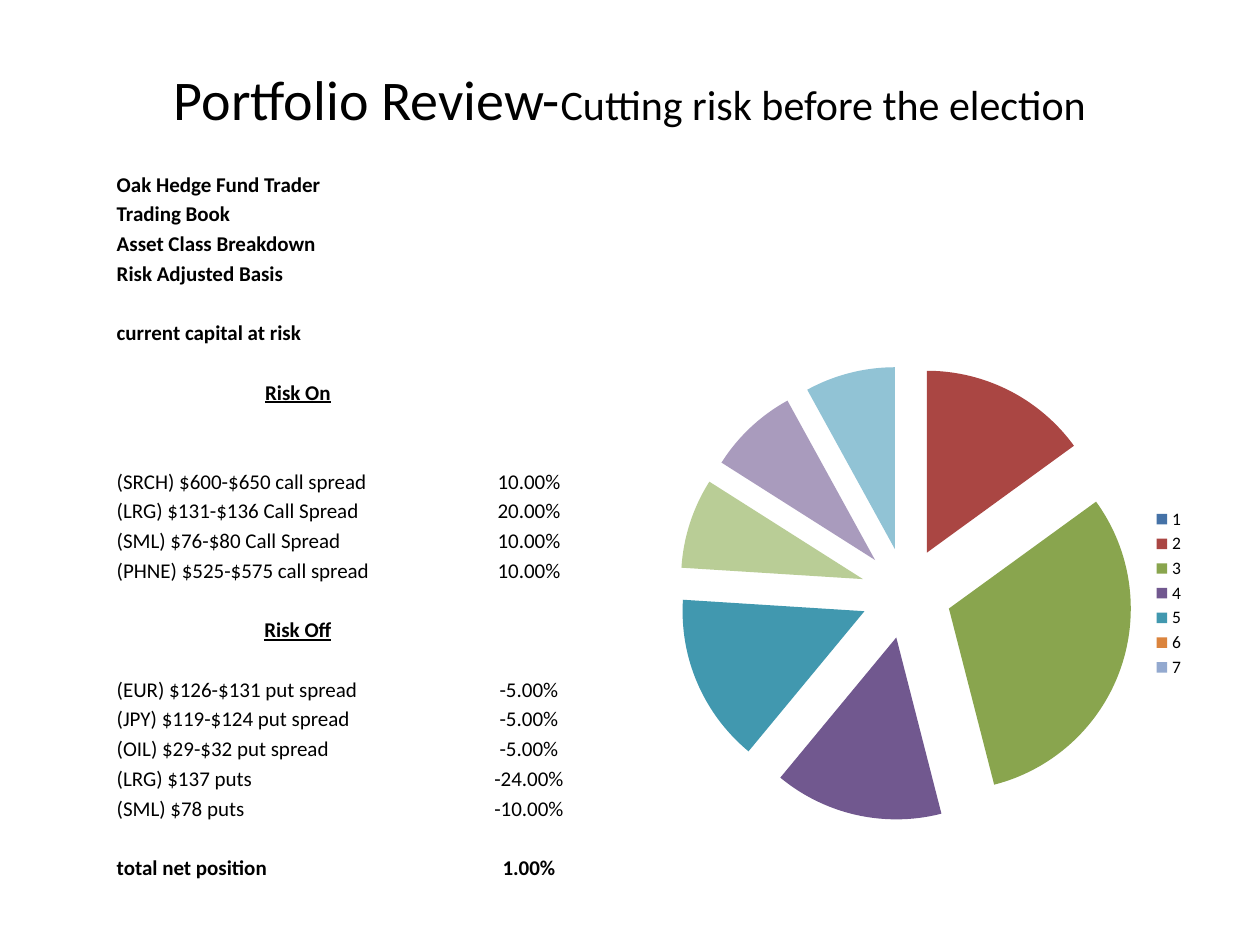
import dataclasses

import lxml.etree
import pptx
import pptx.chart.data
import pptx.dml.color
import pptx.enum.chart
import pptx.enum.text
import pptx.oxml.ns
import pptx.util

CENTER = pptx.enum.text.PP_ALIGN.CENTER
LEFT = pptx.enum.text.PP_ALIGN.LEFT
qn = pptx.oxml.ns.qn


@dataclasses.dataclass(frozen=True)
class Theme:
    font: str = "Calibri"
    ink: str = "000000"
    title: int = 32
    subtitle: int = 24
    body: int = 12
    legend: int = 10
    slices: tuple = ("4572A7", "AA4643", "89A54E", "71588F", "4198AF", "DB843D",
                     "93A9CF", "D19392", "B9CD96", "A99BBD", "91C3D5")


HEADINGS = ["Oak Hedge Fund Trader", "Trading Book", "Asset Class Breakdown",
            "Risk Adjusted Basis"]
RISK_ON = [
    ("(SRCH) $600-$650 call spread", "10.00%"),
    ("(LRG) $131-$136 Call Spread", "20.00%"),
    ("(SML) $76-$80 Call Spread", "10.00%"),
    ("(PHNE) $525-$575 call spread", "10.00%"),
]
RISK_OFF = [
    ("(EUR) $126-$131 put spread", "-5.00%"),
    ("(JPY) $119-$124 put spread", "-5.00%"),
    ("(OIL) $29-$32 put spread", "-5.00%"),
    ("(LRG) $137 puts", "-24.00%"),
    ("(SML) $78 puts", "-10.00%"),
]
SLICE_VALUES = [None, 15, 31, 15, 15, None, None, None, -8, -8, -8]
LEGEND_SHOWN = 7

PLAIN = {}
BOLD = {"bold": True}
SECTION = {"bold": True, "underline": True}
GAP = ("", "", PLAIN)


def book_rows():
    """Rows of the trading book as (label, share, font format)."""
    return [
        *[(heading, "", BOLD) for heading in HEADINGS],
        GAP, ("current capital at risk", "", BOLD),
        GAP, ("Risk On", "", SECTION), GAP, GAP,
        *[(*position, PLAIN) for position in RISK_ON],
        GAP, ("Risk Off", "", SECTION), GAP,
        *[(*position, PLAIN) for position in RISK_OFF],
        GAP, ("total net position", "1.00%", BOLD),
    ]


class SlideBuilder:
    """Places elements on a grid of 120 columns by 90 rows."""
    COLUMNS, ROWS = 120, 90

    def __init__(self, deck, theme):
        self.theme = theme
        self.slide = deck.slides.add_slide(deck.slide_layouts[5])
        self.column = deck.slide_width / self.COLUMNS
        self.row = deck.slide_height / self.ROWS

    def area(self, left, top, width, height):
        return (round(left * self.column), round(top * self.row),
                round(width * self.column), round(height * self.row))

    def style(self, font, size, **formats):
        font.color.rgb = pptx.dml.color.RGBColor.from_string(self.theme.ink)
        formats = {"name": self.theme.font, "size": pptx.util.Pt(size), **formats}
        for name, value in formats.items():
            setattr(font, name, value)

    def title(self, area, parts, space_below):
        heading = self.slide.shapes.title
        for name, value in zip(("left", "top", "width", "height"), self.area(*area)):
            setattr(heading, name, value)
        frame = heading.text_frame
        frame.word_wrap = True
        frame.vertical_anchor = pptx.enum.text.MSO_ANCHOR.MIDDLE
        frame.margin_bottom = round(space_below * self.row)
        paragraph = frame.paragraphs[0]
        paragraph.alignment = CENTER
        for text, size in parts:
            run = paragraph.add_run()
            run.text = text
            self.style(run.font, size)

    def cell(self, cell, text, alignment, formats):
        cell.fill.background()
        cell.vertical_anchor = pptx.enum.text.MSO_ANCHOR.BOTTOM
        inset = pptx.util.Inches(0.01)
        margins = {"margin_left": inset, "margin_right": inset,
                   "margin_top": inset, "margin_bottom": 0}
        for name, value in margins.items():
            setattr(cell, name, value)
        paragraph = cell.text_frame.paragraphs[0]
        paragraph.alignment = alignment
        if text:
            run = paragraph.add_run()
            run.text = text
            self.style(run.font, self.theme.body, **formats)
        else:
            # An empty cell needs its own size to keep the row low
            lxml.etree.SubElement(paragraph._p, qn("a:endParaRPr"),
                                  sz=str(self.theme.body * 100))

    def table(self, area, rows, label_share):
        left, top, width, height = self.area(*area)
        table = self.slide.shapes.add_table(len(rows), 2, left, top, width, height).table
        table.first_row = table.horz_banding = False
        table.columns[0].width = round(width * label_share)
        table.columns[1].width = width - table.columns[0].width
        for index, (label, share, formats) in enumerate(rows):
            table.rows[index].height = height // len(rows)
            alignment = CENTER if formats is SECTION else LEFT
            self.cell(table.cell(index, 0), label, alignment, formats)
            self.cell(table.cell(index, 1), share, CENTER, formats)

    def pie(self, area, values, legend_shown, explosion):
        data = pptx.chart.data.CategoryChartData()
        data.categories = [str(number) for number in range(1, len(values) + 1)]
        data.add_series("Series 1", values)
        chart = self.slide.shapes.add_chart(
            pptx.enum.chart.XL_CHART_TYPE.PIE, *self.area(*area), data).chart
        self.style(chart.font, self.theme.legend)
        chart.has_title = False
        chart.has_legend = True
        chart.legend.position = pptx.enum.chart.XL_LEGEND_POSITION.RIGHT
        chart.legend.include_in_layout = False
        self.hide_legend_entries(chart, range(legend_shown, len(values)))
        plot = chart.plots[0]
        plot.vary_by_categories = True
        series = plot.series[0]
        exploded = lxml.etree.Element(qn("c:explosion"), val=str(explosion))
        series._element.find(qn("c:tx")).addnext(exploded)
        for index, color in enumerate(self.theme.slices):
            fill = series.points[index].format.fill
            fill.solid()
            fill.fore_color.rgb = pptx.dml.color.RGBColor.from_string(color)

    def hide_legend_entries(self, chart, indexes):
        position = chart.legend._element.find(qn("c:legendPos"))
        for index in reversed(indexes):
            entry = lxml.etree.Element(qn("c:legendEntry"))
            lxml.etree.SubElement(entry, qn("c:idx"), val=str(index))
            lxml.etree.SubElement(entry, qn("c:delete"), val="1")
            position.addnext(entry)


def main():
    deck = pptx.Presentation()
    deck.slide_width = pptx.util.Inches(10)
    deck.slide_height = pptx.util.Inches(7.5)
    theme = Theme()
    review = SlideBuilder(deck, theme)
    review.title((6, 3, 108, 20), [
        ("Portfolio Review-", theme.title),
        ("Cutting risk before the election", theme.subtitle),
    ], space_below=8)
    review.table((11, 16, 44, 68), book_rows(), label_share=0.79)
    review.pie((63, 29, 51, 55), SLICE_VALUES, LEGEND_SHOWN, explosion=25)
    deck.save("out.pptx")


if __name__ == "__main__":
    main()
